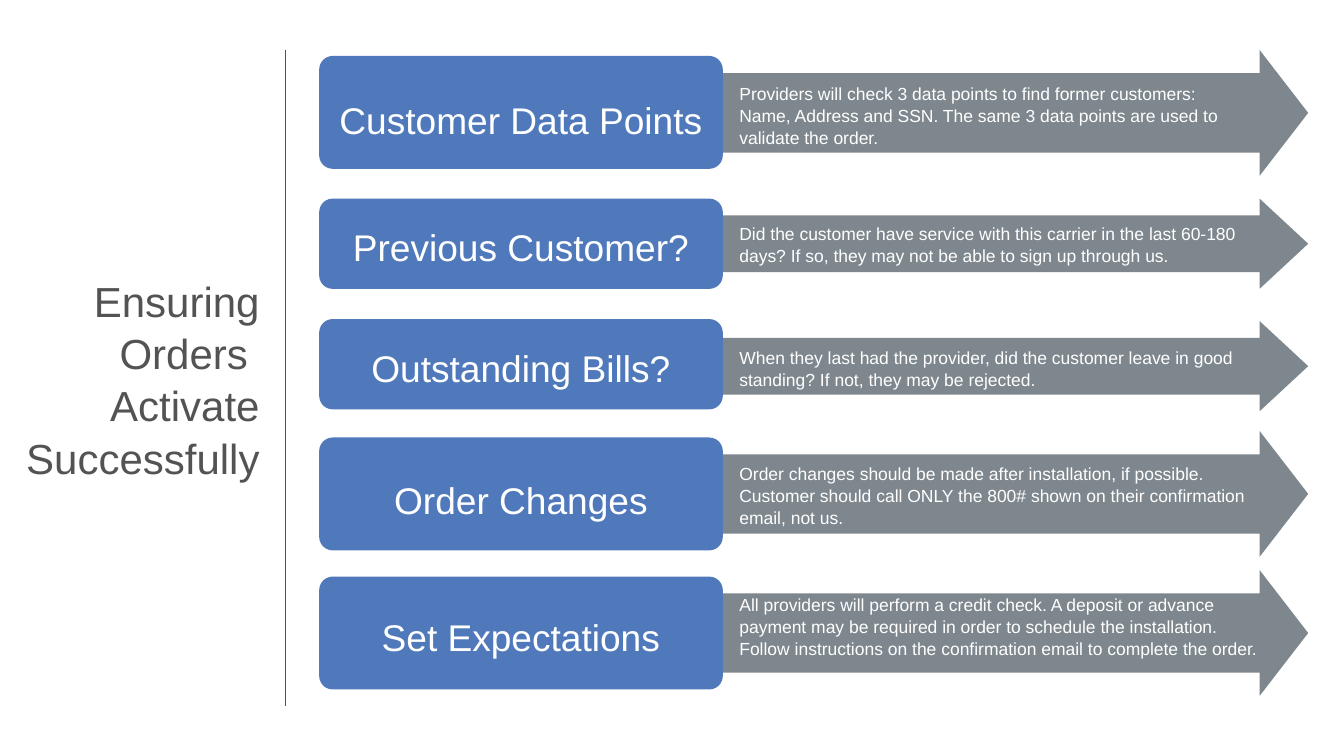
from dataclasses import dataclass

from lxml.etree import SubElement
from pptx import Presentation
from pptx.dml.color import RGBColor as Rgb
from pptx.enum.shapes import MSO_CONNECTOR as Connector, MSO_SHAPE as Shape
from pptx.enum.text import MSO_ANCHOR as Anchor, MSO_AUTO_SIZE as AutoSize, PP_ALIGN as Align
from pptx.oxml.ns import qn
from pptx.util import Pt


@dataclass(frozen=True)
class Theme:
    """Colours, font and type sizes of the slide."""
    card: Rgb = Rgb(0x50, 0x79, 0xBC)
    arrow: Rgb = Rgb(0x7D, 0x87, 0x8D)
    ink: Rgb = Rgb(0x53, 0x53, 0x53)
    light: Rgb = Rgb(0xFF, 0xFF, 0xFF)
    font: str = "Arial"
    title_size: int = 60
    label_size: int = 53
    detail_size: int = 25
    line_spacing: float = 1.04


@dataclass(frozen=True)
class Check:
    """One order check: texts, arrow and card tops and heights, text placement."""
    label: str
    detail: str
    arrow_top: float
    arrow_height: float
    card_top: float
    card_height: float
    label_drop: float
    detail_top: float
    detail_width: float
    detail_height: float


THEME = Theme()
ARROW_LEFT, ARROW_WIDTH, ARROW_HEAD, ARROW_SHAFT = 1019.5, 849.6, 69.5, 0.629
CARD_LEFT, CARD_WIDTH, CARD_RADIUS = 456, 576.7, 19.35
DETAIL_LEFT, LABEL_HEIGHT = 1052.8, 66

CHECKS = [
    Check("Customer Data Points",
          "Providers will check 3 data points to find former customers: Name, Address and SSN. "
          "The same 3 data points are used to validate the order.",
          71.3, 180, 79.9, 161.3, 5, 114.5, 731, 98),
    Check("Previous Customer?",
          "Did the customer have service with this carrier in the last 60-180 days? "
          "If so, they may not be able to sign up through us.",
          283.7, 129, 283.7, 129, 0, 314, 742, 68),
    Check("Outstanding Bills?",
          "When they last had the provider, did the customer leave in good standing? "
          "If not, they may be rejected.",
          458.6, 129, 455.8, 129, 0, 491, 742, 68),
    Check("Order Changes",
          "Order changes should be made after installation, if possible. Customer should call "
          "ONLY the 800# shown on their confirmation email, not us.",
          615.6, 180, 625, 161.3, 3.5, 656.6, 783, 98),
    Check("Set Expectations",
          "All providers will perform a credit check. A deposit or advance payment may be required "
          "in order to schedule the installation. Follow instructions on the confirmation email "
          "to complete the order.",
          814.3, 180, 823.7, 161.3, 0, 843.8, 756, 98),
]


def write(frame, lines, size, color, align, anchor, inset):
    """Fill a text frame with one paragraph per line."""
    frame.word_wrap = True
    frame.auto_size = AutoSize.NONE
    frame.vertical_anchor = anchor
    frame.margin_left = frame.margin_right = Pt(inset)
    frame.margin_top = frame.margin_bottom = Pt(inset)
    for index, line in enumerate(lines):
        paragraph = frame.add_paragraph() if index else frame.paragraphs[0]
        paragraph.alignment = align
        paragraph.line_spacing = THEME.line_spacing
        run = paragraph.add_run()
        run.text = line
        run.font.name = THEME.font
        run.font.size = Pt(size)
        run.font.color.rgb = color


def add_solid(slide, preset, box, color, adjustments):
    """Add a flat filled shape without outline."""
    solid = slide.shapes.add_shape(preset, *map(Pt, box))
    solid.shadow.inherit = False
    solid.fill.solid()
    solid.fill.fore_color.rgb = color
    solid.line.fill.background()
    for index, value in enumerate(adjustments):
        solid.adjustments[index] = value


def add_text(slide, box, text, size, align, anchor):
    """Add a light text box."""
    frame = slide.shapes.add_textbox(*map(Pt, box)).text_frame
    write(frame, [text], size, THEME.light, align, anchor, 3.6)


def place_title(slide, left, top, width, height):
    """Move the title placeholder into its box and write the heading."""
    title = slide.shapes.title
    title.left, title.top, title.width, title.height = map(Pt, (left, top, width, height))
    write(title.text_frame, ["Ensuring", "Orders ", "Activate Successfully"],
          THEME.title_size, THEME.ink, Align.RIGHT, Anchor.MIDDLE, 4.3)


def place_divider(slide, x, top, bottom):
    """Draw the vertical rule between title and checks."""
    divider = slide.shapes.add_connector(Connector.STRAIGHT, Pt(x), Pt(top), Pt(x), Pt(bottom))
    divider.line.color.rgb = THEME.ink
    divider.line.width = Pt(2)
    SubElement(divider.element.spPr, qn("a:effectLst"))


def place_check(slide, check):
    """Draw one check as a labelled card with its explaining arrow."""
    add_solid(slide, Shape.RIGHT_ARROW,
              (ARROW_LEFT, check.arrow_top, ARROW_WIDTH, check.arrow_height),
              THEME.arrow, (ARROW_SHAFT, ARROW_HEAD / check.arrow_height))
    add_solid(slide, Shape.ROUNDED_RECTANGLE,
              (CARD_LEFT, check.card_top, CARD_WIDTH, check.card_height),
              THEME.card, (CARD_RADIUS / check.card_height,))
    label_top = check.card_top + (check.card_height - LABEL_HEIGHT) / 2 + check.label_drop
    add_text(slide, (CARD_LEFT, label_top, CARD_WIDTH, LABEL_HEIGHT),
             check.label, THEME.label_size, Align.CENTER, Anchor.TOP)
    add_text(slide, (DETAIL_LEFT, check.detail_top, check.detail_width, check.detail_height),
             check.detail, THEME.detail_size, Align.LEFT, Anchor.TOP)


def main():
    """Build and save the slide."""
    deck = Presentation()
    deck.slide_width, deck.slide_height = Pt(1920.24), Pt(1080)
    slide = deck.slides.add_slide(deck.slide_layouts[5])
    place_title(slide, 23.8, 323.3, 351.4, 433.4)
    place_divider(slide, 408.2, 71.3, 1008.7)
    for check in CHECKS:
        place_check(slide, check)
    deck.save("out.pptx")


if __name__ == "__main__":
    main()
